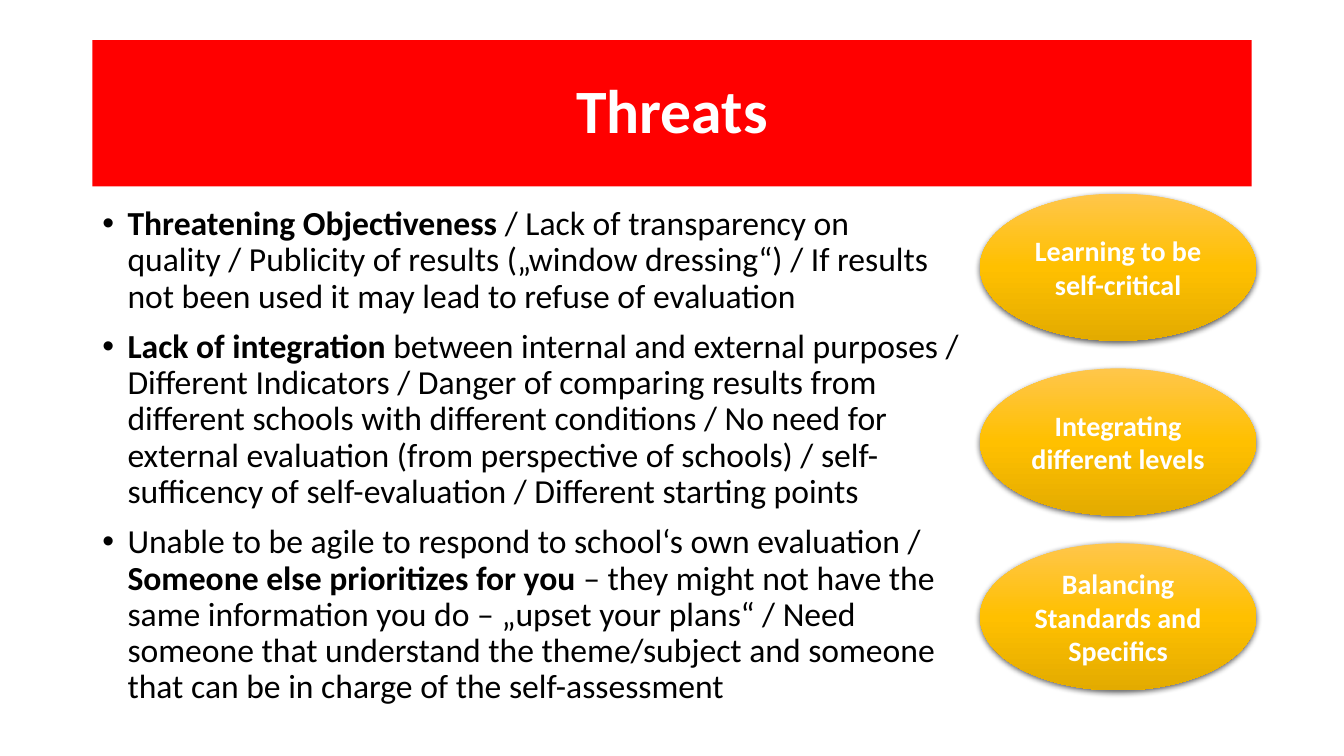
from dataclasses import dataclass

from lxml.etree import SubElement as Sub
from pptx import Presentation
from pptx.dml.color import RGBColor as Rgb
from pptx.enum.shapes import MSO_SHAPE as Kind
from pptx.enum.text import MSO_ANCHOR as Anchor, PP_ALIGN as Align
from pptx.oxml import parse_xml as to_xml
from pptx.oxml.ns import nsdecls, qn
from pptx.util import Inches, Pt


@dataclass(frozen=True)
class Theme:
    font: str = "Calibri"
    red: str = "FF0000"
    white: str = "FFFFFF"
    black: str = "000000"
    gold: tuple = ((0, "FFC64B"), (50, "FFC000"), (100, "E3AB00"))
    head: int = 44
    body: int = 24
    note: int = 20


def write(frame, paras, font, size, color, bold=False, align=Align.LEFT,
          anchor=Anchor.TOP, line=1.0, before=0, bullet=None):
    frame.word_wrap = True
    frame.vertical_anchor = anchor
    for i, runs in enumerate(paras):
        para = frame.add_paragraph() if i else frame.paragraphs[0]
        para.alignment = align
        para.line_spacing = line
        para.space_before = Pt(before)
        if bullet:
            props = para._p.get_or_add_pPr()
            props.set("marL", str(Inches(0.25)))
            props.set("indent", str(-Inches(0.25)))
            Sub(props, qn("a:buFont"), typeface="Arial")
            Sub(props, qn("a:buChar"), char=bullet)
        for text, strong in runs:
            run = para.add_run()
            run.text = text
            run.font.name = font
            run.font.size = Pt(size)
            run.font.bold = bold or strong
            run.font.color.rgb = Rgb.from_string(color)


class Deck:
    """Draws on one slide, with boxes given in percent of its size."""

    def __init__(self, theme):
        self.theme = theme
        self.file = Presentation()
        self.file.slide_width = Inches(13.33)
        self.file.slide_height = Inches(7.5)
        self.slide = self.file.slides.add_slide(self.file.slide_layouts[6])

    def place(self, left, top, width, height):
        wide, high = self.file.slide_width, self.file.slide_height
        return [int(share * full / 100) for share, full in
                ((left, wide), (top, high), (width, wide), (height, high))]

    def shape(self, kind, box):
        item = self.slide.shapes.add_shape(kind, *self.place(*box))
        item.shadow.inherit = False
        item.line.fill.background()
        return item

    def title(self, text, box):
        look = self.theme
        item = self.shape(Kind.RECTANGLE, box)
        item.fill.solid()
        item.fill.fore_color.rgb = Rgb.from_string(look.red)
        write(item.text_frame, [[(text, True)]], look.font, look.head,
              look.white, align=Align.CENTER, anchor=Anchor.MIDDLE, line=0.9)

    def points(self, paras, box):
        look = self.theme
        item = self.slide.shapes.add_textbox(*self.place(*box))
        write(item.text_frame, paras, look.font, look.body, look.black,
              line=0.9, before=10, bullet="•")

    def oval(self, text, box):
        look = self.theme
        item = self.shape(Kind.OVAL, box)
        stops = "".join(
            f'<a:gs pos="{at * 1000}"><a:srgbClr val="{tone}"/></a:gs>'
            for at, tone in look.gold)
        fill = to_xml(f'<a:gradFill {nsdecls("a")}><a:gsLst>{stops}</a:gsLst>'
                      '<a:lin ang="5400000" scaled="0"/></a:gradFill>')
        props = item._element.spPr
        props.find(qn("a:prstGeom")).addnext(fill)
        glow = to_xml(
            f'<a:outerShdw {nsdecls("a")} blurRad="{Pt(4.5)}" dist="{Pt(1.5)}"'
            ' dir="5400000" algn="ctr" rotWithShape="0">'
            f'<a:srgbClr val="{look.black}"><a:alpha val="63000"/></a:srgbClr>'
            '</a:outerShdw>')
        props.find(qn("a:effectLst")).append(glow)
        write(item.text_frame, [[(text, True)]], look.font, look.note,
              look.white, align=Align.CENTER, anchor=Anchor.MIDDLE)


THREATS = [
    [("Threatening Objectiveness ", True),
     ("/ Lack of transparency on quality / Publicity of results "
      "(„window dressing“) / If results not been used it may lead to "
      "refuse of evaluation", False)],
    [("Lack of integration ", True),
     ("between internal and external purposes / Different Indicators / "
      "Danger of comparing results from different schools with different "
      "conditions / No need for external evaluation (from perspective of "
      "schools) / self-sufficency of self-evaluation / Different starting "
      "points", False)],
    [("Unable to be agile to respond to school‘s own evaluation / ", False),
     ("Someone else prioritizes for you ", True),
     ("– they might not have the same information you do – „upset your "
      "plans“ / Need someone that understand the theme/subject and someone "
      "that can be in charge of the self-assessment", False)],
]
GOALS = ["Learning to be self-critical", "Integrating different levels",
         "Balancing Standards and Specifics"]


def main():
    deck = Deck(Theme())
    deck.title("Threats", (6.88, 5.33, 86.25, 19.33))
    deck.points(THREATS, (6.88, 26.67, 66, 69.87))
    for row, goal in enumerate(GOALS):
        deck.oval(goal, (72.92, 25.6 + 23.13 * row, 20.55, 19.47))
    deck.file.save("out.pptx")


if __name__ == "__main__":
    main()
